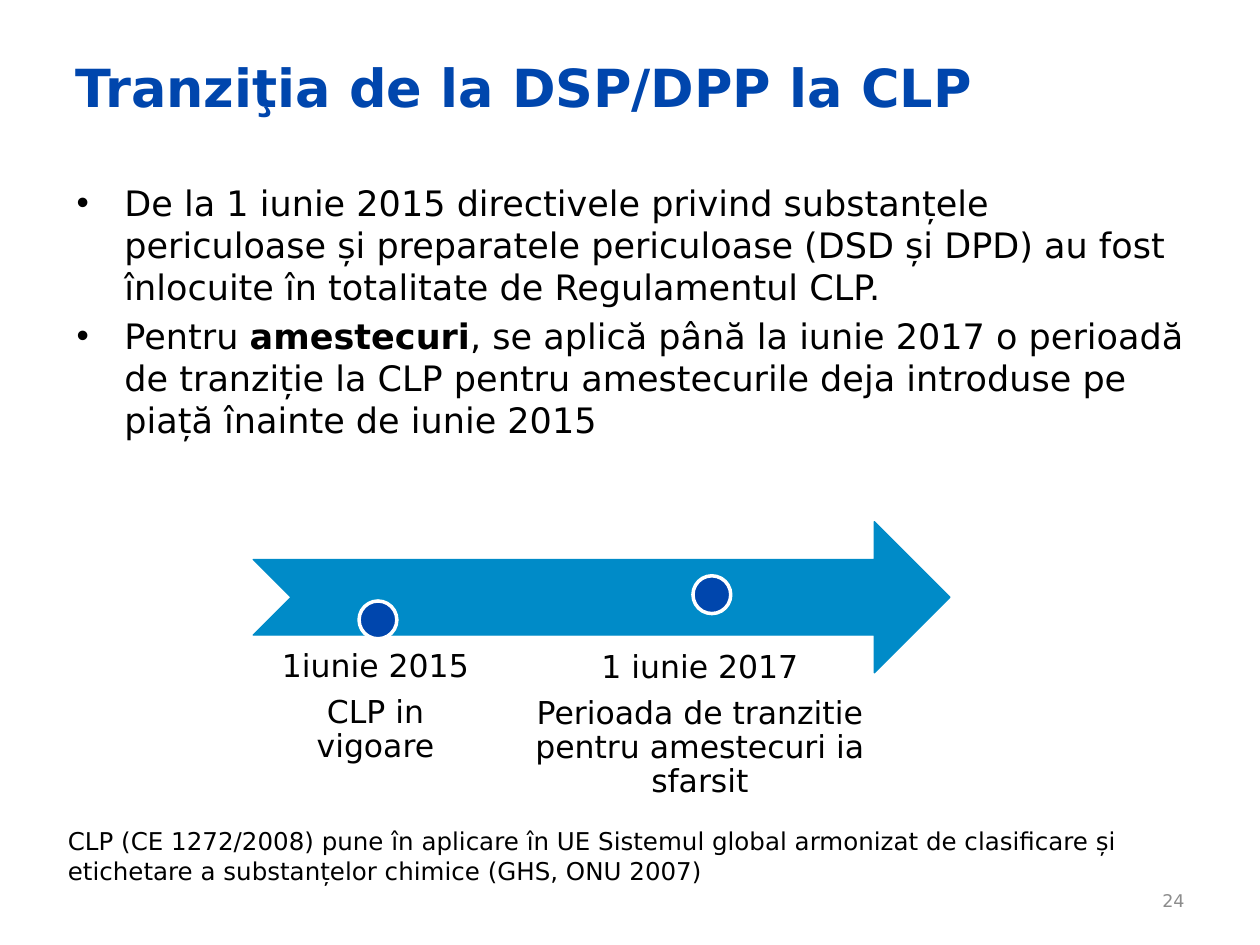
from dataclasses import dataclass

from lxml import etree
from pptx import Presentation
from pptx import util as u
from pptx.dml.color import RGBColor
from pptx.enum import shapes, text
from pptx.oxml.ns import qn

EMU_PER_PX = 9144  # 100 px to the inch


@dataclass(frozen=True)
class Theme:
    font: str = "DejaVu Sans"
    blue: str = "0046AD"
    sky: str = "008BC8"
    black: str = "000000"
    white: str = "FFFFFF"
    grey: str = "8C8C8C"
    title: int = 30
    body: int = 20
    label: int = 18
    note: int = 14
    number: int = 10


@dataclass(frozen=True)
class Box:
    left: int
    top: int
    width: int
    height: int

    def emu(self) -> list[int]:
        return [px(n) for n in (self.left, self.top, self.width, self.height)]


@dataclass(frozen=True)
class Milestone:
    label_box: Box
    anchor: text.MSO_ANCHOR
    lines: tuple[str, ...]
    dot: Box


THEME = Theme()


def px(length: int) -> int:
    return u.Emu(length * EMU_PER_PX)


def add_bullet(paragraph, indent: int) -> None:
    properties = paragraph._p.get_or_add_pPr()
    properties.set("marL", str(px(indent)))
    properties.set("indent", str(-px(indent)))
    etree.SubElement(properties, qn("a:buFont")).set("typeface", "Arial")
    etree.SubElement(properties, qn("a:buChar")).set("char", "•")


def add_text(parent, box: Box, paragraphs, *, size: int, color: str = THEME.black,
             bold: bool = False, align=text.PP_ALIGN.LEFT, anchor=text.MSO_ANCHOR.TOP,
             insets=(10, 5, 10, 5), before: int = 0, after: int = 0,
             spacing: float = 1.0, bullet_indent: int = 0) -> None:
    """Each paragraph is a string or a list of (string, bold) runs."""
    frame = parent.add_textbox(*box.emu()).text_frame
    frame.word_wrap = True
    frame.vertical_anchor = anchor
    (frame.margin_left, frame.margin_top,
     frame.margin_right, frame.margin_bottom) = map(px, insets)
    for index, content in enumerate(paragraphs):
        paragraph = frame.add_paragraph() if index else frame.paragraphs[0]
        paragraph.alignment = align
        paragraph.line_spacing = spacing
        paragraph.space_before, paragraph.space_after = u.Pt(before), u.Pt(after)
        if bullet_indent:
            add_bullet(paragraph, bullet_indent)
        runs = [(content, bold)] if isinstance(content, str) else content
        for words, is_bold in runs:
            run = paragraph.add_run()
            run.text = words
            run.font.name, run.font.size, run.font.bold = THEME.font, u.Pt(size), is_bold
            run.font.color.rgb = RGBColor.from_string(color)


def add_filled(parent, kind, box: Box, fill: str, line: str, line_width: float) -> None:
    shape = parent.add_shape(kind, *box.emu())
    shape.shadow.inherit = False
    shape.fill.solid()
    shape.fill.fore_color.rgb = RGBColor.from_string(fill)
    shape.line.color.rgb = RGBColor.from_string(line)
    shape.line.width = u.Pt(line_width)


def add_milestone(parent, milestone: Milestone) -> None:
    add_text(parent, milestone.label_box, milestone.lines, size=THEME.label,
             align=text.PP_ALIGN.CENTER, anchor=milestone.anchor,
             insets=(14,) * 4, after=7, spacing=0.9)
    add_filled(parent, shapes.MSO_SHAPE.OVAL, milestone.dot, THEME.blue, THEME.white, 2)


BULLETS = (
    "De la 1 iunie 2015 directivele privind substanțele periculoase și preparatele "
    "periculoase (DSD și DPD) au fost înlocuite în totalitate de Regulamentul CLP.",
    [("Pentru ", False), ("amestecuri", True),
     (", se aplică până la iunie 2017 o perioadă de tranziție la CLP pentru "
      "amestecurile deja introduse pe piață înainte de iunie 2015", False)],
)
MILESTONES = (
    Milestone(Box(201, 501, 194, 120), text.MSO_ANCHOR.BOTTOM,
              ("1iunie 2015", "CLP in vigoare"), Box(285, 477, 30, 30)),
    Milestone(Box(409, 503, 293, 147), text.MSO_ANCHOR.TOP,
              ("1 iunie 2017", "Perioada de tranzitie pentru amestecuri ia sfarsit"),
              Box(550, 457, 30, 30)),
)
NOTE = ("CLP (CE 1272/2008) pune în aplicare în UE Sistemul global armonizat de "
        "clasificare și etichetare a substanțelor chimice (GHS, ONU 2007)")


def main() -> None:
    presentation = Presentation()
    presentation.slide_width, presentation.slide_height = px(1000), px(750)
    slide = presentation.slides.add_slide(presentation.slide_layouts[6])

    # Title, raised by a deep bottom inset
    add_text(slide.shapes, Box(50, 30, 900, 125), ["Tranziţia de la DSP/DPP la CLP"],
             size=THEME.title, color=THEME.blue, bold=True,
             anchor=text.MSO_ANCHOR.MIDDLE, insets=(10, 5, 10, 53))

    # Body
    add_text(slide.shapes, Box(51, 139, 900, 244), BULLETS, size=THEME.body,
             before=4, bullet_indent=38)

    # Slide number
    add_text(slide.shapes, Box(717, 695, 233, 40), ["24"], size=THEME.number,
             color=THEME.grey, align=text.PP_ALIGN.RIGHT, anchor=text.MSO_ANCHOR.MIDDLE)

    # Timeline
    timeline = slide.shapes.add_group_shape().shapes
    add_filled(timeline, shapes.MSO_SHAPE.NOTCHED_RIGHT_ARROW, Box(201, 414, 553, 120),
               THEME.sky, THEME.sky, 0.75)
    for milestone in MILESTONES:
        add_milestone(timeline, milestone)

    # Footnote
    add_text(slide.shapes, Box(44, 651, 858, 57), [NOTE], size=THEME.note)

    presentation.save("out.pptx")


if __name__ == "__main__":
    main()
